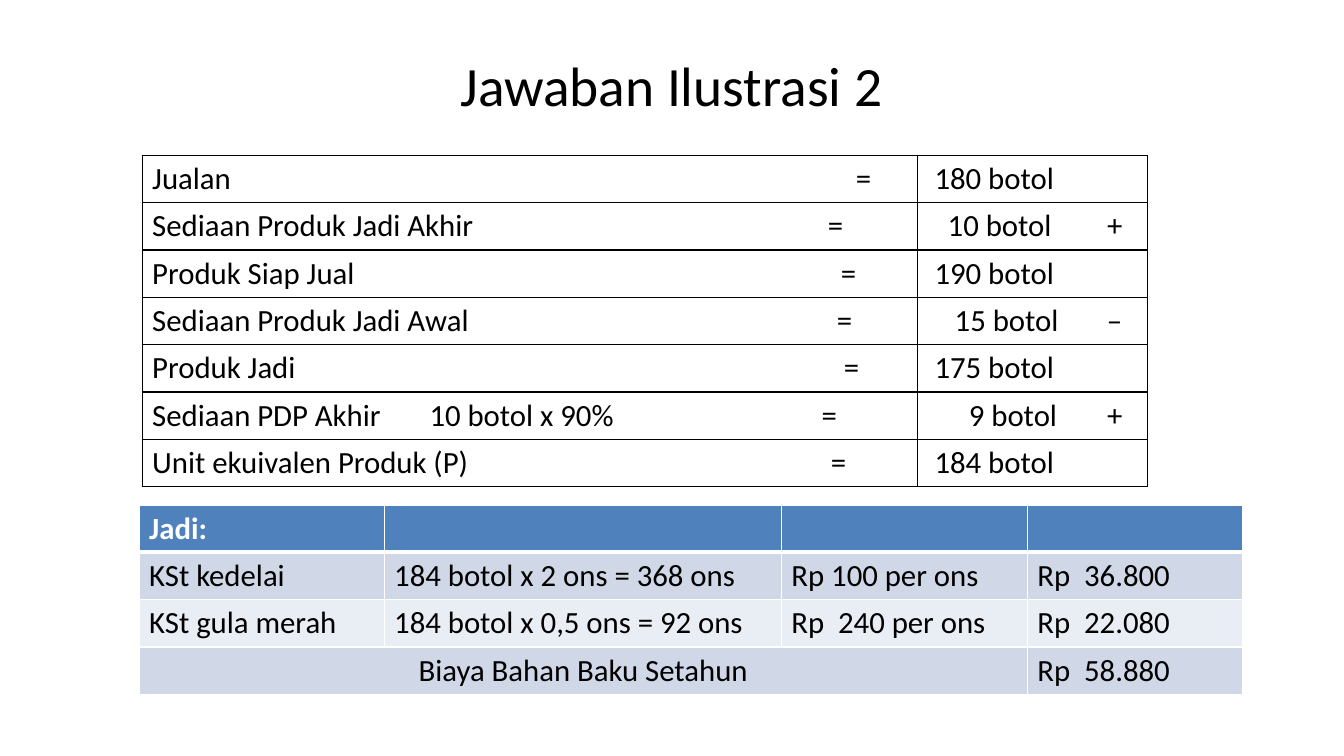
"""Build the slide with the unit-equivalent table and the raw material cost table."""
from lxml import etree
from pptx import Presentation
from pptx import util as u
from pptx.dml.color import RGBColor
from pptx.enum import text
from pptx.oxml.ns import qn

TITLE = "Jawaban Ilustrasi 2"
UNITS = [
    ("Jualan\t=", [6.98], "180 botol", 0.07),
    ("Sediaan Produk Jadi Akhir\t=", [6.70], "10 botol\t+", 0.20),
    ("Produk Siap Jual\t=", [6.83], "190 botol", 0.07),
    ("Sediaan Produk Jadi Awal\t=", [6.79], "15 botol\t–", 0.27),
    ("Produk Jadi\t=", [6.86], "175 botol", 0.07),
    ("Sediaan PDP Akhir\t10 botol x 90%\t=", [2.75, 6.64], "9 botol\t+", 0.41),
    ("Unit ekuivalen Produk (P)\t=", [6.73], "184 botol", 0.07),
]
COSTS = [
    ("Jadi:", "", "", ""),
    ("KSt kedelai", "184 botol x 2 ons = 368 ons", "Rp 100 per ons", "Rp  36.800"),
    ("KSt gula merah", "184 botol x 0,5 ons = 92 ons", "Rp  240 per ons", "Rp  22.080"),
    ("Biaya Bahan Baku Setahun", "", "", "Rp  58.880"),
]
UNIT_COLS = [7.69, 2.28]
COST_COLS = [2.43, 3.94, 2.44, 2.13]
COST_FILLS = ["4F81BD", "D0D8E8", "E9EDF4", "D0D8E8"]
ROW_HEIGHT = 0.47
CELL_MARGIN = 0.1
SIGN_STOP = 1.78
BODY = {"name": "Calibri", "size": u.Pt(22), "bold": False}
HEADER = {**BODY, "bold": True}
HEADING = {**BODY, "size": u.Pt(39.6)}


def paint(target, color):
    target.rgb = RGBColor.from_string(color)


def write(paragraph, words, style, color="000000", align=text.PP_ALIGN.LEFT, stops=()):
    paragraph.alignment = align
    if words:
        run = paragraph.add_run()
        run.text = words
        for name, value in style.items():
            setattr(run.font, name, value)
        paint(run.font.color, color)
    if stops:
        tabs = etree.SubElement(paragraph._p.get_or_add_pPr(), qn("a:tabLst"))
        for stop in stops:
            etree.SubElement(tabs, qn("a:tab"), pos=str(u.Inches(stop)), algn="l")


def border(cell, color, widths):
    for side, width in zip("LRTB", widths):
        line = etree.SubElement(cell._tc.get_or_add_tcPr(), qn(f"a:ln{side}"), w=str(u.Pt(width)))
        fill = etree.SubElement(line, qn("a:solidFill"))
        etree.SubElement(fill, qn("a:srgbClr"), val=color)


def add_grid(slide, left, top, row_count, widths):
    grid = slide.shapes.add_table(row_count, len(widths), u.Inches(left), u.Inches(top),
                                  u.Inches(sum(widths)), u.Inches(ROW_HEIGHT * row_count)).table
    grid.first_row = grid.horz_banding = False
    for column, width in zip(grid.columns, widths):
        column.width = u.Inches(width)
    for row in grid.rows:
        row.height = u.Inches(ROW_HEIGHT)
    return grid


def add_title(slide):
    box = slide.shapes.add_textbox(u.Inches(1.41), u.Inches(0.52), u.Inches(10.5), u.Inches(0.63))
    frame = box.text_frame
    frame.word_wrap = True
    frame.vertical_anchor = text.MSO_ANCHOR.MIDDLE
    write(frame.paragraphs[0], TITLE, HEADING, align=text.PP_ALIGN.CENTER)


def add_units(slide):
    units = add_grid(slide, 1.41, 1.54, len(UNITS), UNIT_COLS)
    for r, (label, label_stops, amount, indent) in enumerate(UNITS):
        entries = [(label, label_stops, 0), (amount, [SIGN_STOP - indent], indent)]
        for c, (words, stops, inset) in enumerate(entries):
            cell = units.cell(r, c)
            cell.margin_left = u.Inches(CELL_MARGIN + inset)
            border(cell, "000000", (1, 1, 1, 1))
            cell.fill.background()
            write(cell.text_frame.paragraphs[0], words, BODY, stops=stops if "\t" in words else ())


def add_costs(slide):
    costs = add_grid(slide, 1.38, 5.01, len(COSTS), COST_COLS)
    total = len(COSTS) - 1
    costs.cell(total, 0).merge(costs.cell(total, 2))
    for r, (entries, fill) in enumerate(zip(COSTS, COST_FILLS)):
        style, color = (HEADER, "FFFFFF") if r == 0 else (BODY, "000000")
        for c, words in enumerate(entries):
            cell = costs.cell(r, c)
            border(cell, "FFFFFF", (1, 1, 3 if r == 1 else 1, 3 if r == 0 else 1))
            cell.fill.solid()
            paint(cell.fill.fore_color, fill)
            align = text.PP_ALIGN.CENTER if (r, c) == (total, 0) else text.PP_ALIGN.LEFT
            write(cell.text_frame.paragraphs[0], words, style, color, align)


def main():
    deck = Presentation()
    deck.slide_width, deck.slide_height = u.Inches(13.33), u.Inches(7.5)
    slide = deck.slides.add_slide(deck.slide_layouts[6])
    add_title(slide)
    add_units(slide)
    add_costs(slide)
    deck.save("out.pptx")


if __name__ == "__main__":
    main()
